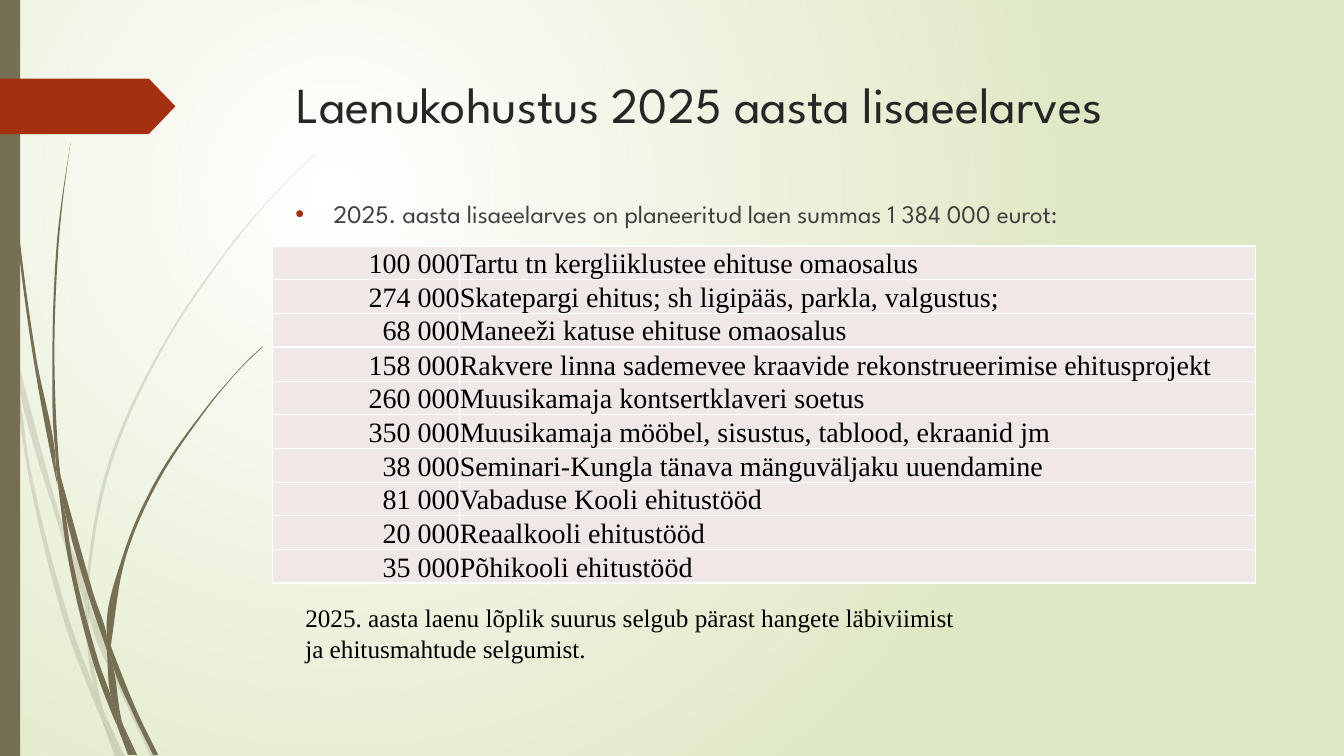
from lxml import etree
from pptx import Presentation
from pptx.dml.color import RGBColor
from pptx.enum.shapes import MSO_SHAPE
from pptx.enum.text import MSO_ANCHOR, PP_ALIGN
from pptx.oxml import parse_xml
from pptx.oxml.ns import nsdecls, qn
from pptx.util import Inches, Pt

RECT, ARROW = MSO_SHAPE.RECTANGLE, MSO_SHAPE.PENTAGON
BOTTOM = MSO_ANCHOR.BOTTOM
LEFT, RIGHT = PP_ALIGN.LEFT, PP_ALIGN.RIGHT
WHITE = RGBColor(0xFF, 0xFF, 0xFF)
GREEN = RGBColor(0xDF, 0xE8, 0xC4)
OLIVE = RGBColor(0x76, 0x6F, 0x54)
RED = RGBColor(0xA5, 0x30, 0x10)
PINK = RGBColor(0xF0, 0xE8, 0xE7)
BLACK = RGBColor(0, 0, 0)
DARK = RGBColor(0x26, 0x26, 0x26)
GREY = RGBColor(0x40, 0x40, 0x40)
SANS, SERIF = "League Spartan", "Times New Roman"

PALE_GRASS = [
    [(0.11, 3.5), (0.09, 3.22), (0, 2.82), (0, 2.99), (0.1, 3.44)],
    [(0.58, 5.22), (0.84, 5.99), (0.85, 5.86), (0.62, 5.2), (0.14, 3.45), (0.17, 3.76)],
    [(0.92, 6.07), (0.88, 5.96), (0.88, 6.1), (1.23, 6.94), (1.5, 7.51),
     (1.55, 7.51), (1.27, 6.92)],
    [(1.19, 7.51), (1.24, 7.51), (1.05, 7.11)],
    [(0.93, 6.83), (0.7, 6.19), (0.31, 4.69), (0.17, 3.76), (0.11, 3.5),
     (0.28, 4.7), (0.65, 6.21), (0.92, 6.93), (1.01, 7.14), (0.99, 7.07)],
    [(0.84, 5.99), (0.87, 6.46), (0.93, 6.83), (0.96, 6.92), (1.05, 7.11),
     (1.03, 7.06), (0.91, 6.46), (0.88, 6.1), (0.88, 6.08)],
    [(0.88, 5.84), (1.1, 4.62), (1.6, 3.49), (2.29, 2.45), (2.68, 1.98),
     (2.9, 1.75), (3.12, 1.54), (3.12, 1.53), (2.89, 1.75), (2.68, 1.97),
     (2.28, 2.44), (1.58, 3.48), (1.07, 4.61), (0.85, 5.84), (0.85, 5.86), (0.88, 5.96)],
    [(1.01, 7.14), (1.14, 7.51), (1.19, 7.51)],
    [(0.88, 6.08), (0.88, 6.1), (0.88, 5.96), (0.85, 5.86), (0.84, 5.99)],
    [(0.96, 6.92), (0.93, 6.83), (0.99, 7.07), (1.01, 7.14), (1.19, 7.51), (1.05, 7.11)],
]
DARK_GRASS = [
    [(0.07, 1.1), (0.17, 2.33), (0.33, 3.55), (0.56, 4.77), (0.57, 4.81),
     (0.55, 4.57), (0.55, 4.53), (0.36, 3.55), (0.19, 2.32), (0.08, 1.09),
     (0.05, 0.48), (0.04, 0), (0.03, 0), (0.04, 0.48)],
    [(0.88, 5.92), (1.06, 6.45), (1.06, 6.33), (1.06, 6.31), (0.93, 5.9),
     (0.6, 4.72), (0.64, 5.05)],
    [(1.13, 6.49), (1.1, 6.41), (1.11, 6.56), (1.32, 7.08), (1.52, 7.49),
     (1.57, 7.49), (1.36, 7.06)],
    [(1.1, 6.91), (0.98, 6.57), (0.72, 5.56), (0.64, 5.05), (0.57, 4.77),
     (0.68, 5.57), (0.93, 6.59), (1.11, 7.08), (1.17, 7.22), (1.16, 7.17)],
    [(0.6, 4.72), (0.58, 4.53), (0.54, 3.49), (0.58, 2.45), (0.63, 1.93),
     (0.7, 1.41), (0.62, 1.93), (0.56, 2.45), (0.52, 3.49), (0.55, 4.49)],
    [(1.33, 7.49), (1.36, 7.49), (1.22, 7.19)],
    [(0.57, 4.77), (0.64, 5.05), (0.6, 4.72), (0.55, 4.49), (0.55, 4.53)],
    [(1.11, 6.33), (1.25, 5.52), (1.58, 4.76), (2.05, 4.06), (2.31, 3.74),
     (2.45, 3.59), (2.61, 3.44), (2.6, 3.44), (2.45, 3.58), (2.31, 3.73),
     (2.04, 4.05), (1.56, 4.74), (1.22, 5.51), (1.06, 6.31), (1.1, 6.41)],
    [(1.17, 7.22), (1.27, 7.49), (1.31, 7.49)],
    [(1.06, 6.45), (1.1, 6.91), (1.16, 7.06), (1.22, 7.19), (1.21, 7.16),
     (1.11, 6.56), (1.09, 6.51)],
    [(1.06, 6.45), (1.09, 6.51), (1.11, 6.56), (1.1, 6.41), (1.06, 6.31), (1.06, 6.33)],
    [(1.16, 7.06), (1.1, 6.91), (1.16, 7.17), (1.17, 7.22), (1.3, 7.49),
     (1.33, 7.49), (1.22, 7.19)],
]
LOANS = [
    ("100 000", "Tartu tn kergliiklustee ehituse omaosalus"),
    ("274 000", "Skatepargi ehitus; sh ligipääs, parkla, valgustus;"),
    ("68 000", "Maneeži katuse ehituse omaosalus"),
    ("158 000", "Rakvere linna sademevee kraavide rekonstrueerimise ehitusprojekt"),
    ("260 000", "Muusikamaja kontsertklaveri soetus"),
    ("350 000", "Muusikamaja mööbel, sisustus, tablood, ekraanid jm"),
    ("38 000", "Seminari-Kungla tänava mänguväljaku uuendamine"),
    ("81 000", "Vabaduse Kooli ehitustööd"),
    ("20 000", "Reaalkooli ehitustööd"),
    ("35 000", "Põhikooli ehitustööd"),
]
TALL_ROWS = {3: 0.34, 5: 0.3}


def paint_back(slide):
    fill = slide.background.fill
    fill.gradient()
    for stop, color in zip(fill.gradient_stops, (WHITE, GREEN)):
        stop.color.rgb = color
    grad = slide.element.find(".//" + qn("a:gradFill"))
    glow = parse_xml(f'<a:path {nsdecls("a")} path="circle"><a:fillToRect '
                     'l="50000" t="50000" r="100000" b="100000"/></a:path>')
    grad.replace(grad.find(qn("a:lin")), glow)


def paint(shape, color):
    shape.shadow.inherit = False
    shape.fill.solid()
    shape.fill.fore_color.rgb = color
    shape.line.fill.background()


def add_block(slide, kind, box, color):
    shape = slide.shapes.add_shape(kind, *map(Inches, box))
    paint(shape, color)
    return shape


def lean(own, other):
    if (own * other.conjugate()).real < 0.8:
        return own
    return (own + other) / abs(own + other)


def soften(blade):
    trail = blade.element.find(".//" + qn("a:path"))
    ring = [complex(int(p.get("x")), int(p.get("y"))) for p in trail.iter(qn("a:pt"))]
    sides = [b - a for a, b in zip(ring, ring[1:])]
    ways = [side / abs(side) for side in sides]
    for i, line in enumerate(trail.findall(qn("a:lnTo"))):
        reach = abs(sides[i]) / 3
        grips = (ring[i] + reach * lean(ways[i], ways[i - 1]),
                 ring[i + 1] - reach * lean(ways[i], ways[(i + 1) % len(ways)]))
        curve = etree.Element(qn("a:cubicBezTo"))
        for spot in (*grips, ring[i + 1]):
            etree.SubElement(curve, qn("a:pt"), x=str(round(spot.real)),
                             y=str(round(spot.imag)))
        trail.replace(line, curve)


def add_grass(slide, blades, alpha=100):
    tuft = slide.shapes.add_group_shape()
    for blade in blades:
        spots = [(Inches(x), Inches(y)) for x, y in blade]
        pen = tuft.shapes.build_freeform(*spots[0])
        pen.add_line_segments(spots[1:] + spots[:1], close=True)
        shape = pen.convert_to_shape()
        paint(shape, OLIVE)
        soften(shape)
        if alpha < 100:
            tint = shape.element.spPr.find(qn("a:solidFill"))[0]
            etree.SubElement(tint, qn("a:alpha"), val=str(alpha * 1000))


def style(para, size, name, color):
    para.font.size = Pt(size)
    para.font.name = name
    para.font.color.rgb = color


def add_text(slide, box, text, size, name, color):
    frame = slide.shapes.add_textbox(*map(Inches, box)).text_frame
    frame.word_wrap = True
    para = frame.paragraphs[0]
    para.text = text
    style(para, size, name, color)
    return para


def add_bullet(para):
    para.space_before = Pt(10)
    props = para._p.get_or_add_pPr()
    props.set("marL", str(Inches(0.38)))
    props.set("indent", str(-Inches(0.38)))
    tint = etree.SubElement(props, qn("a:buClr"))
    etree.SubElement(tint, qn("a:srgbClr"), val=str(RED))
    etree.SubElement(props, qn("a:buFont"), typeface="Arial")
    etree.SubElement(props, qn("a:buChar"), char="•")
    props.append(props.find(qn("a:defRPr")))


def fill_cell(cell, text, align):
    cell.margin_left = cell.margin_right = cell.margin_top = cell.margin_bottom = 0
    cell.vertical_anchor = BOTTOM
    para = cell.text_frame.paragraphs[0]
    para.text = text
    para.alignment = align
    style(para, 20, SERIF, BLACK)
    cell.fill.solid()
    cell.fill.fore_color.rgb = PINK


def add_loans(slide):
    box = map(Inches, (2.7, 2.44, 9.75, 3.34))
    table = slide.shapes.add_table(len(LOANS), 2, *box).table
    table.first_row = table.horz_banding = False
    for col, width in zip(table.columns, (1.86, 7.89)):
        col.width = Inches(width)
    for i, loan in enumerate(LOANS):
        table.rows[i].height = Inches(TALL_ROWS.get(i, 0.26))
        for j, align in enumerate((RIGHT, LEFT)):
            fill_cell(table.cell(i, j), loan[j], align)


def main():
    deck = Presentation()
    deck.slide_width, deck.slide_height = Inches(13.33), Inches(7.5)
    slide = deck.slides.add_slide(deck.slide_layouts[6])
    paint_back(slide)
    add_grass(slide, PALE_GRASS, alpha=20)
    add_grass(slide, DARK_GRASS)
    add_block(slide, RECT, (0, 0, 0.2, 7.5), OLIVE)
    arrow = add_block(slide, ARROW, (0, 0.78, 1.74, 0.55), RED)
    arrow.adjustments[0] = 0.48
    add_text(slide, (2.84, 0.68, 9.75, 1.4),
             "Laenukohustus 2025 aasta lisaeelarves", 36, SANS, DARK)
    add_bullet(add_text(
        slide, (2.83, 1.92, 9.75, 0.51),
        "2025. aasta lisaeelarves on planeeritud laen summas 1 384 000 eurot:",
        18, SANS, GREY))
    add_loans(slide)
    add_text(slide, (2.93, 5.93, 6.67, 0.71),
             "2025. aasta laenu lõplik suurus selgub pärast hangete läbiviimist "
             "ja ehitusmahtude selgumist.", 18, SERIF, BLACK)
    deck.save("out.pptx")


if __name__ == "__main__":
    main()
